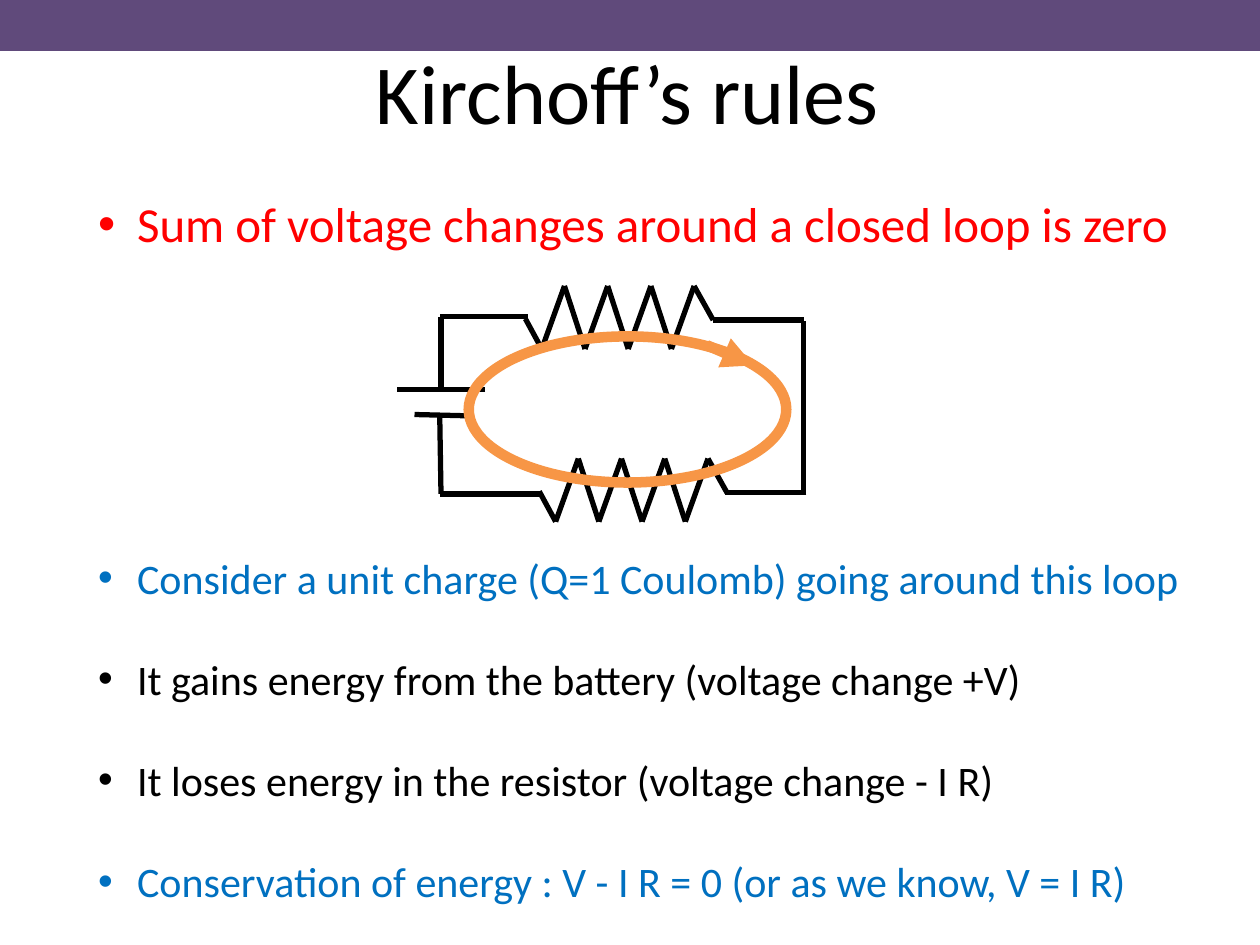
import pptx
import pptx.util
import pptx.dml.color
import pptx.enum.shapes
import pptx.enum.text
import lxml.etree
from pptx.oxml.ns import qn

THEME = {
    "font": "Calibri",
    "bar": "604A7B", "ink": "000000", "rule": "FF0000",
    "accent": "0070C0", "loop": "F79646",
    "title": 48, "lead": 28, "body": 24,
    "wire": 3, "loop_width": 6,
}
SHAPE = pptx.enum.shapes.MSO_SHAPE

prs = pptx.Presentation()
prs.slide_width = pptx.util.Inches(10)
prs.slide_height = pptx.util.Inches(7.5)
U = prs.slide_width / 100  # square grid: 100 columns by 75 rows
slide = prs.slides.add_slide(prs.slide_layouts[6])


def grid(*values):
    return [round(v * U) for v in values]


def add_line(start, end, color="ink", width="wire"):
    c = slide.shapes.add_connector(
        pptx.enum.shapes.MSO_CONNECTOR.STRAIGHT, *grid(*start, *end))
    c.line.color.rgb = pptx.dml.color.RGBColor.from_string(THEME[color])
    c.line.width = pptx.util.Pt(THEME[width])
    lxml.etree.SubElement(c._element.spPr, qn("a:effectLst"))
    return c


# Top bar
sp = slide.shapes.add_shape(SHAPE.RECTANGLE, *grid(0, 0, 100, 3.9))
sp.shadow.inherit = False
sp.fill.solid()
sp.fill.fore_color.rgb = pptx.dml.color.RGBColor.from_string(THEME["bar"])
sp.line.color.rgb = pptx.dml.color.RGBColor.from_string(THEME["bar"])
sp.line.width = pptx.util.Pt(2)

# Title and bullets: (text, size, colour, space before in points)
title = [("Kirchoff’s rules", "title", "ink", 0)]
bullets = [
    ("Sum of voltage changes around a closed loop is zero", "lead", "rule", 0),
    ("Consider a unit charge (Q=1 Coulomb) going around this loop", "body", "accent", 171),
    ("It gains energy from the battery (voltage change +V)", "body", "ink", 29),
    ("It loses energy in the resistor (voltage change - I R)", "body", "ink", 29),
    ("Conservation of energy : V - I R = 0 (or as we know, V = I R)", "body", "accent", 29),
]
for box, rows in (((0, 3, 99.6, 8.4), title), ((6.8, 14.9, 88, 57.6), bullets)):
    tf = slide.shapes.add_textbox(*grid(*box)).text_frame
    tf.word_wrap = True
    if rows is title:
        tf.vertical_anchor = pptx.enum.text.MSO_ANCHOR.MIDDLE
    for i, (text, size, color, gap) in enumerate(rows):
        p = tf.paragraphs[0] if i == 0 else tf.add_paragraph()
        p.text = text
        if rows is title:
            p.alignment = pptx.enum.text.PP_ALIGN.CENTER
        else:
            pPr = p._p.get_or_add_pPr()
            indent = grid(3.1)[0]
            pPr.set("marL", str(indent))
            pPr.set("indent", str(-indent))
            lxml.etree.SubElement(pPr, qn("a:buFont"), typeface="Arial")
            lxml.etree.SubElement(pPr, qn("a:buChar"), char="•")
        if gap:
            p.space_before = pptx.util.Pt(gap)
        r = p.runs[0]
        r.font.name = THEME["font"]
        r.font.size = pptx.util.Pt(THEME[size])
        r.font.color.rgb = pptx.dml.color.RGBColor.from_string(THEME[color])

# Two resistors: four teeth each, with a lead at either end
PITCH = 3.43
for left, top in ((41.7, 22.7), (42.8, 36.4)):
    points = [(left, top + 2.6)]
    for tooth in range(4):
        points.append((left + 1.3 + tooth * PITCH, top + 5))
        points.append((left + 3.1 + tooth * PITCH, top))
    points.append((left + 14.9, top + 2.7))
    for start, end in zip(points, points[1:]):
        add_line(start, end)

# Wires and battery plates
for start, end in (
    ((63.8, 25.4), (56.6, 25.4)), ((41.9, 25.1), (34.9, 25.1)),
    ((64, 39.1), (57.5, 39.1)), ((43, 39.2), (34.9, 39.2)),
    ((35, 30.9), (35, 25.2)), ((35, 39.2), (34.9, 32.9)),
    ((63.8, 39), (63.8, 25.5)),
    ((38.5, 30.9), (31.5, 30.9)), ((37.1, 33), (32.9, 32.9)),
):
    add_line(start, end)

# Loop with its direction arrow
sp = slide.shapes.add_shape(SHAPE.OVAL, *grid(37.2, 26.7, 25.2, 11.6))
sp.shadow.inherit = False
sp.fill.background()
sp.line.color.rgb = pptx.dml.color.RGBColor.from_string(THEME["loop"])
sp.line.width = pptx.util.Pt(THEME["loop_width"])
arrow = add_line((56.1, 27.4), (59.8, 29), "loop", "loop_width")
lxml.etree.SubElement(arrow.line._get_or_add_ln(), qn("a:tailEnd"), type="triangle")

prs.save("out.pptx")
